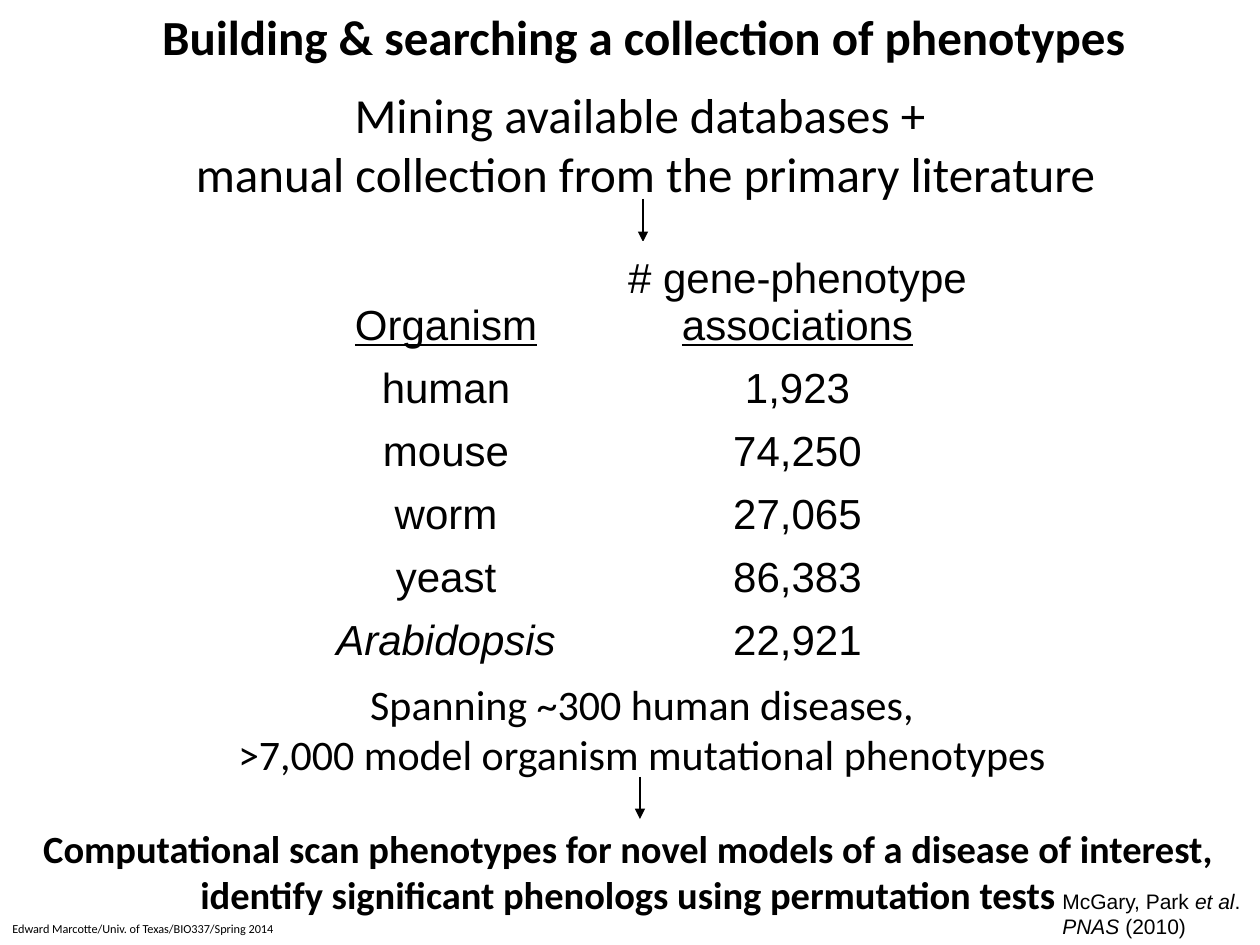
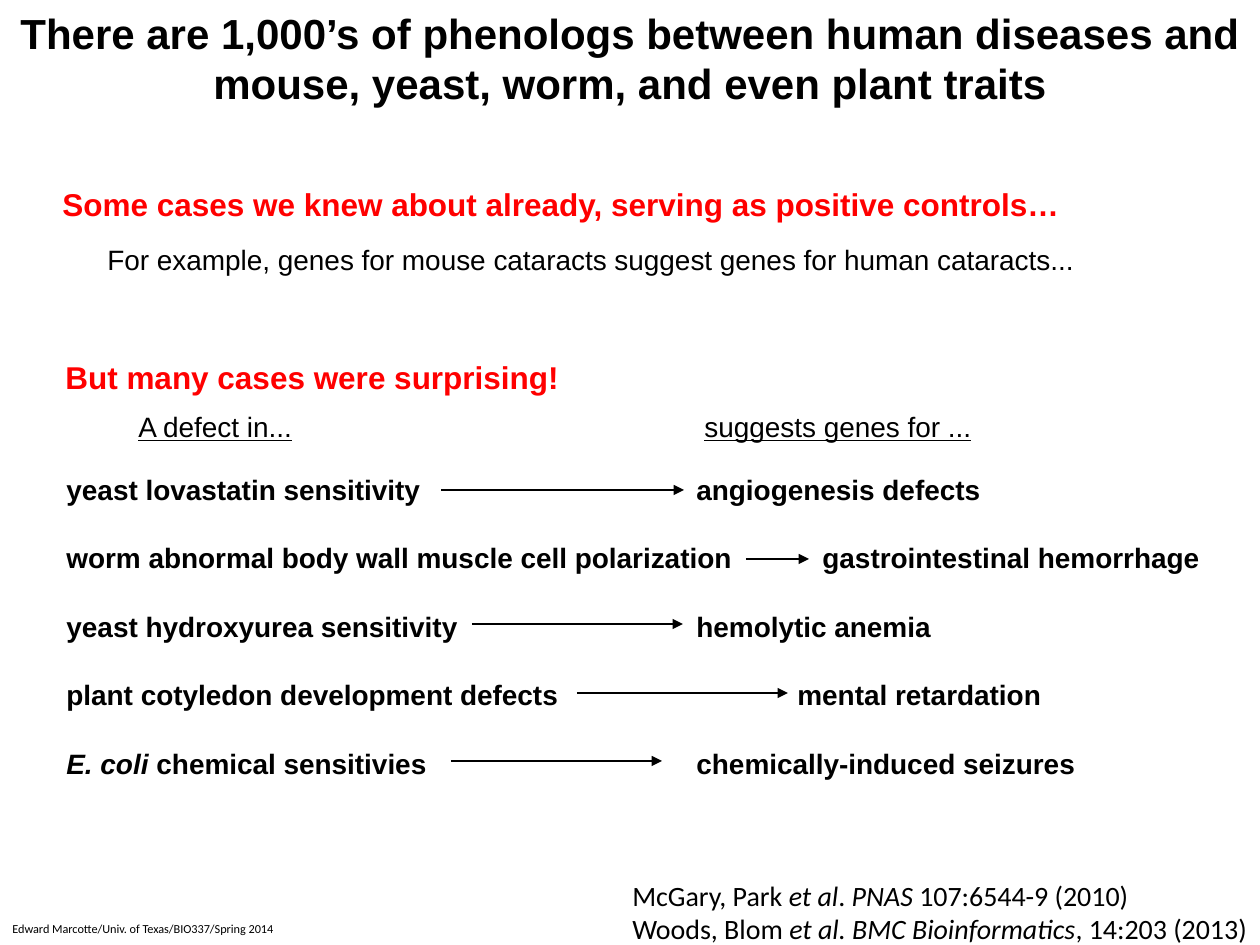
from lxml import etree
from pptx import Presentation
from pptx.dml.color import RGBColor
from pptx.enum.shapes import MSO_CONNECTOR
from pptx.enum.text import MSO_ANCHOR, MSO_AUTO_SIZE, PP_ALIGN
from pptx.oxml.ns import qn
from pptx.util import Emu, Pt

PX = 914400 / 126
LEFT, CENTER = PP_ALIGN.LEFT, PP_ALIGN.CENTER
BOTTOM = MSO_ANCHOR.BOTTOM
FIT = MSO_AUTO_SIZE.SHAPE_TO_FIT_TEXT
STRAIGHT = MSO_CONNECTOR.STRAIGHT
COLORS = {"ink": "000000", "accent": "FF0000"}
HEAD, BODY = "Arial", "Calibri"
FOOTER = "Edward Marcotte/Univ. of Texas/BIO337/Spring 2014"
COUNTS = [
    ("human", "1,923"),
    ("mouse", "74,250"),
    ("worm", "27,065"),
    ("yeast", "86,383"),
    (("Arabidopsis", "i"), "22,921"),
]
PHENOLOGS = [
    (["yeast lovastatin sensitivity"], "angiogenesis defects", 630, (441, 684, 490)),
    (["worm abnormal body wall muscle cell polarization"],
     "gastrointestinal hemorrhage", 756, (746, 809, 559)),
    (["yeast hydroxyurea sensitivity"], "hemolytic anemia", 630, (472, 683, 624)),
    (["plant cotyledon development defects"], "mental retardation", 731, (577, 788, 693)),
    ([("E. coli ", "i"), "chemical sensitivies"],
     "chemically-induced seizures", 630, (451, 662, 761)),
]


def px(value):
    """Turn px into EMU."""
    return Emu(round(value * PX))


def add_tab(p, pos):
    """Give a paragraph one left tab stop."""
    tabs = etree.SubElement(p._p.get_or_add_pPr(), qn("a:tabLst"))
    etree.SubElement(tabs, qn("a:tab"), pos=str(px(pos)), algn="l")


def write(tf, lines, size, font=HEAD, color="ink", bold=False, align=LEFT, gap=0, tabs=()):
    """Fill a text frame; a line is a list of runs, each text or (text, style)."""
    for i, line in enumerate(lines):
        p = tf.paragraphs[0] if i == 0 else tf.add_paragraph()
        if tabs:
            add_tab(p, tabs[i])
        p.alignment = align
        if i and gap:
            p.space_before = Pt(gap)
        for run in line if isinstance(line, list) else [line]:
            text, style = run if isinstance(run, tuple) else (run, "")
            r = p.add_run()
            r.text = text
            r.font.size, r.font.name, r.font.bold = Pt(size), font, bold
            r.font.italic, r.font.underline = "i" in style, "u" in style
            r.font.color.rgb = RGBColor.from_string(COLORS[color])


def add_text(slide, box, lines, size, wrap=False, **fmt):
    """Add a text box that fits its text."""
    tf = slide.shapes.add_textbox(*map(px, box)).text_frame
    tf.word_wrap, tf.auto_size = wrap, FIT
    write(tf, lines, size, **fmt)


def add_arrow(slide, x1, y1, x2, y2):
    """Add a thin line with an arrowhead at its end."""
    c = slide.shapes.add_connector(STRAIGHT, *map(px, (x1, y1, x2, y2)))
    c.line.width = Pt(0.75)
    c.line.color.rgb = RGBColor.from_string(COLORS["ink"])
    etree.SubElement(c.line._get_or_add_ln(), qn("a:tailEnd"), type="triangle")
    etree.SubElement(c._element.spPr, qn("a:effectLst"))


def add_footer(slide):
    """Add the course line at the lower left."""
    add_text(slide, (0, 915, 295, 28), [FOOTER], 7, font=BODY)


def add_counts(slide, left, top):
    """Add the table of associations per organism."""
    rows = [(("Organism", "u"), ["# gene-phenotype", (" associations", "u")])] + COUNTS
    widths, heights = (262, 441), [105] + [58] * len(COUNTS)
    box = (left, top, sum(widths), sum(heights))
    table = slide.shapes.add_table(len(rows), len(widths), *map(px, box)).table
    table.first_row = table.horz_banding = False
    for column, width in zip(table.columns, widths):
        column.width = px(width)
    for i, row in enumerate(rows):
        table.rows[i].height = px(heights[i])
        for j, value in enumerate(row):
            cell = table.cell(i, j)
            cell.fill.background()
            cell.vertical_anchor = BOTTOM
            write(cell.text_frame, [value], 24, align=CENTER)


def add_phenologs(slide, left, top, width, height):
    """Add the defect and gene pairs, joined by arrows."""
    lines = [defect + ["\t" + trait] for defect, trait, _, _ in PHENOLOGS]
    add_text(slide, (left, top, width, height), lines, 16, wrap=True, bold=True,
             gap=20, tabs=[tab for _, _, tab, _ in PHENOLOGS])
    for _, _, _, (x1, x2, y) in PHENOLOGS:
        add_arrow(slide, left + x1 - 54, top + y - 466, left + x2 - 54, top + y - 466)


def build_collection(slide):
    """Build the slide on collecting phenotypes."""
    prose = {"font": BODY, "align": CENTER}
    add_text(slide, (144, 0, 999, 72), ["Building & searching a collection of phenotypes"],
             28, bold=True, **prose)
    add_text(slide, (178, 78, 935, 131), ["Mining available databases + ",
             "manual collection from the primary literature"], 28, **prose)
    add_arrow(slide, 643, 199, 643, 242)
    add_counts(slide, 315, 242)
    add_text(slide, (222, 672, 840, 115), ["Spanning ~300 human diseases,",
             ">7,000 model organism mutational phenotypes"], 24, **prose)
    add_arrow(slide, 640, 777, 640, 819)
    add_text(slide, (23, 819, 1210, 106), [
        "Computational scan phenotypes for novel models of a disease of interest,",
        "identify significant phenologs using permutation tests"], 22, bold=True, **prose)
    add_text(slide, (1050, 882, 212, 63), [["McGary, Park ", ("et al", "i"), "."],
             [("PNAS ", "i"), "(2010)"]], 12)
    add_footer(slide)


def build_surprises(slide):
    """Build the slide on known and surprising phenologs."""
    claim = {"color": "accent", "bold": True}
    add_text(slide, (0, 1, 1260, 115), [
        "There are 1,000’s of phenologs between human diseases and "
        "mouse, yeast, worm, and even plant traits"], 24, wrap=True, bold=True, align=CENTER)
    add_text(slide, (50, 179, 1034, 50),
             ["Some cases we knew about already, serving as positive controls…"], 18, **claim)
    add_text(slide, (95, 236, 1005, 47), [
        "For example, genes for mouse cataracts suggest genes for human cataracts..."], 16)
    add_text(slide, (53, 352, 524, 50), ["But many cases were surprising!"], 18, **claim)
    add_text(slide, (126, 403, 900, 47), [[("A defect in...", "u"), "\t",
             ("suggests genes for ...", "u")]], 16, wrap=True, tabs=[566])
    add_phenologs(slide, 54, 466, 1166, 318)
    add_text(slide, (620, 872, 696, 81), [
        ["McGary, Park ", ("et al", "i"), ". ", ("PNAS ", "i"), "107:6544-9 (2010)"],
        ["Woods, Blom ", ("et al. BMC Bioinformatics", "i"), ", 14:203 (2013)"]],
        16, wrap=True, font=BODY)
    add_footer(slide)


def main():
    """Build and save the slides."""
    prs = Presentation()
    prs.slide_width, prs.slide_height = px(1260), px(945)
    for build in (build_collection, build_surprises):
        build(prs.slides.add_slide(prs.slide_layouts[6]))
    prs.save("out.pptx")


if __name__ == "__main__":
    main()
